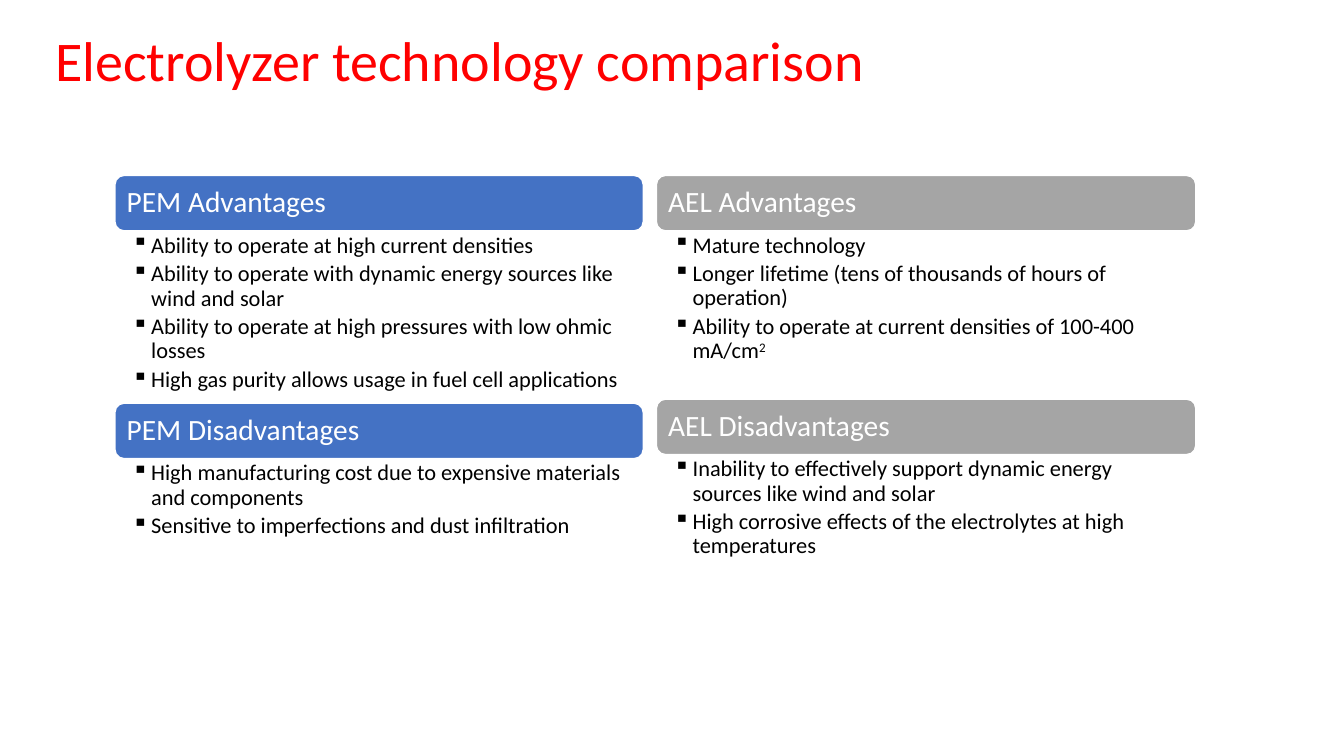
import pptx
import pptx.dml.color
import pptx.enum.shapes
import pptx.enum.text
import pptx.oxml
import pptx.oxml.ns
import pptx.util

PX = 9144  # 100 px to the inch
COLORS = {"title": "FF0000", "pem": "4472C4", "ael": "A5A5A5",
          "white": "FFFFFF", "body": "000000"}
HEADER_H = 55
BULLET_INDENT = 19

# Each column: colour, box, then (top, header, points); ^ starts a superscript
COLUMNS = [
    ("pem", (114, 174, 524, 402), [
        (0, "PEM Advantages", [
            "Ability to operate at high current densities",
            "Ability to operate with dynamic energy sources like wind and solar",
            "Ability to operate at high pressures with low ohmic losses",
            "High gas purity allows usage in fuel cell applications"]),
        (226, "PEM Disadvantages", [
            "High manufacturing cost due to expensive materials and components",
            "Sensitive to imperfections and dust infiltration"])]),
    ("ael", (651, 174, 535, 386), [
        (0, "AEL Advantages", [
            "Mature technology",
            "Longer lifetime (tens of thousands of hours of operation)",
            "Ability to operate at current densities of 100-400 mA/cm^2"]),
        (222, "AEL Disadvantages", [
            "Inability to effectively support dynamic energy sources like wind and solar",
            "High corrosive effects of the electrolytes at high temperatures"])]),
]


def px(*lengths):
    return [pptx.util.Emu(n * PX) for n in lengths]


def rgb(name):
    return pptx.dml.color.RGBColor.from_string(COLORS[name])


def set_frame(tf, margins, anchor):
    sides = ("margin_left", "margin_top", "margin_right", "margin_bottom")
    values = dict(zip(sides, px(*margins)), word_wrap=True, vertical_anchor=anchor)
    for name, value in values.items():
        setattr(tf, name, value)


def add_bullet(p):
    pPr = p._p.get_or_add_pPr()
    pPr.set("marL", str(BULLET_INDENT * PX))
    pPr.set("indent", str(-BULLET_INDENT * PX))
    ns = pptx.oxml.ns.nsdecls("a")
    pPr.append(pptx.oxml.parse_xml(f'<a:buChar {ns} char="▪"/>'))


def write(p, text, size, color, space_after=0):
    layout = {"alignment": pptx.enum.text.PP_ALIGN.LEFT, "line_spacing": 0.9,
              "space_before": pptx.util.Pt(0), "space_after": pptx.util.Pt(space_after)}
    for name, value in layout.items():
        setattr(p, name, value)
    for i, part in enumerate(text.split("^")):
        r = p.add_run()
        r.text = part
        for name, value in {"name": "Calibri", "size": pptx.util.Pt(size)}.items():
            setattr(r.font, name, value)
        r.font.color.rgb = rgb(color)
        if i:
            r.font._element.set("baseline", "30000")


def add_title(s, box, text):
    tf = s.shapes.add_textbox(*px(*box)).text_frame
    set_frame(tf, (10, 5, 10, 5), pptx.enum.text.MSO_ANCHOR.TOP)
    write(tf.paragraphs[0], text, 40, "title")


def add_section(s, box, color, header, points):
    x, y, w, h = box
    # Header bar
    bar = s.shapes.add_shape(pptx.enum.shapes.MSO_SHAPE.ROUNDED_RECTANGLE,
                             *px(x, y, w, HEADER_H))
    bar.shadow.inherit = False
    bar.fill.solid()
    bar.fill.fore_color.rgb = rgb(color)
    bar.line.color.rgb = rgb("white")
    bar.line.width = pptx.util.Pt(1)
    set_frame(bar.text_frame, (9, 9, 9, 9), pptx.enum.text.MSO_ANCHOR.MIDDLE)
    write(bar.text_frame.paragraphs[0], header, 21, "white")
    # Bulleted points
    tf = s.shapes.add_textbox(*px(x, y + HEADER_H, w, h - HEADER_H)).text_frame
    set_frame(tf, (17, 3, 16, 3), pptx.enum.text.MSO_ANCHOR.TOP)
    for i, point in enumerate(points):
        p = tf.add_paragraph() if i else tf.paragraphs[0]
        p.level = 1
        add_bullet(p)
        write(p, point, 16, "body", 3.2)


def add_column(s, box, color, sections):
    x, y, w, h = box
    bottoms = [top for top, _, _ in sections[1:]] + [h]
    for (top, header, points), bottom in zip(sections, bottoms):
        add_section(s, (x, y + top, w, bottom - top), color, header, points)


def main():
    prs = pptx.Presentation()
    prs.slide_width, prs.slide_height = px(1333, 750)
    s = prs.slides.add_slide(prs.slide_layouts[6])
    add_title(s, (45, 28, 1221, 83), "Electrolyzer technology comparison")
    for color, box, sections in COLUMNS:
        add_column(s, box, color, sections)
    prs.save("out.pptx")


if __name__ == "__main__":
    main()
